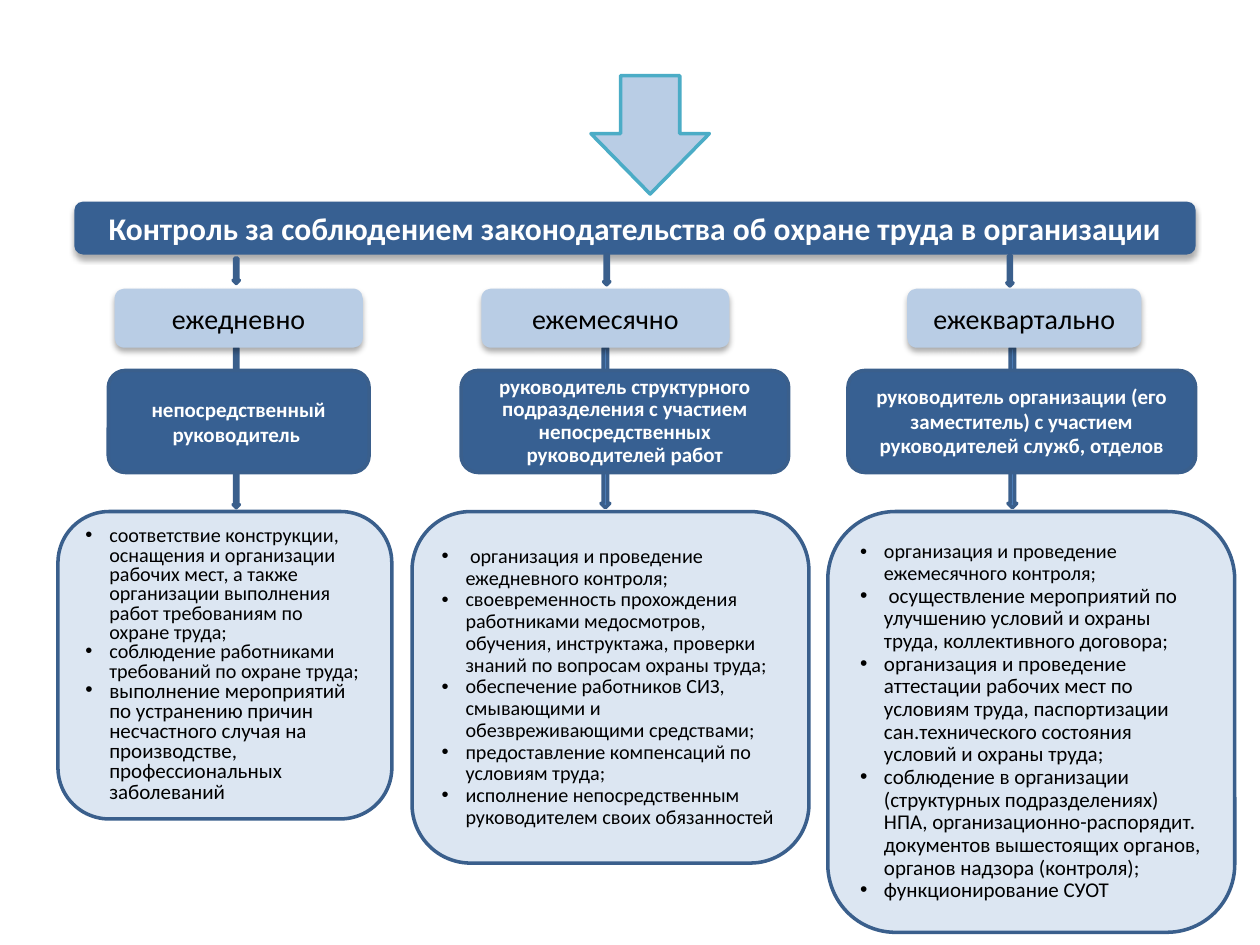
from lxml.etree import SubElement
from pptx import Presentation
from pptx.dml.color import RGBColor
from pptx.enum.shapes import MSO_SHAPE as Shape
from pptx.enum.text import MSO_ANCHOR as Anchor, PP_ALIGN as Align
from pptx.oxml.ns import qn
from pptx.util import Inches, Pt

NAVY, EDGE, BLUE, TEAL = "376092", "3A5F8C", "4F81BD", "4BACC6"
SKY, PALE, WHITE, BLACK = "B9CDE5", "DCE6F2", "FFFFFF", "000000"
TITLE = "Контроль за соблюдением законодательства об охране труда в организации"

COLUMNS = [
    dict(
        period="ежедневно", period_at=(9.1, 19.7), top_arrow=(18.5, 20.5, 0.5, 2),
        long_arrow=(18.5, 0.5),
        person="непосредственный руководитель ", person_at=(8.6, 20.7), person_spacing=1.0,
        duties_at=(4.6, 26.5, 24.4), duties_spacing=0.8,
        duties=[
            ("соответствие конструкции, оснащения и организации рабочих мест, а также "
             "организации выполнения работ требованиям по охране труда;", 11.5),
            ("соблюдение работниками требований по охране труда;", 11.5),
            ("выполнение мероприятий по устранению причин несчастного случая на "
             "производстве, профессиональных заболеваний", 12),
        ],
    ),
    dict(
        period="ежемесячно", period_at=(38.2, 19.7), top_arrow=(47.9, 20.2, 0.5, 2.4),
        long_arrow=(47.7, 0.7),
        person="руководитель структурного подразделения с участием непосредственных "
               "руководителей работ",
        person_at=(36.6, 26), person_spacing=0.9,
        duties_at=(32.7, 31.5, 27.9), duties_spacing=0.9,
        duties=[
            (" организация и проведение ежедневного контроля;", 11.5),
            ("своевременность прохождения работниками медосмотров, обучения, "
             "инструктажа, проверки знаний по вопросам охраны труда;", 11.5),
            ("обеспечение работников СИЗ, смывающими и обезвреживающими средствами;", 11.5),
            ("предоставление компенсаций по условиям труда;", 11.5),
            ("исполнение непосредственным руководителем своих обязанностей", 11.5),
        ],
    ),
    dict(
        period="ежеквартально", period_at=(72, 18.6), top_arrow=(79.9, 20.3, 0.5, 2.4),
        long_arrow=(80, 0.7),
        person="руководитель организации (его заместитель) с участием руководителей "
               "служб, отделов",
        person_at=(67.3, 27.6), person_spacing=Pt(14),
        duties_at=(65.7, 32.3, 33.4), duties_spacing=0.9,
        duties=[
            ("организация и проведение ежемесячного контроля;", 11.5),
            (" осуществление мероприятий по улучшению условий и охраны труда, "
             "коллективного договора;", 12),
            ("организация и проведение аттестации рабочих мест по условиям труда, "
             "паспортизации сан.технического состояния условий и охраны труда;", 12),
            ("соблюдение в организации (структурных подразделениях) НПА, "
             "организационно-распорядит. документов вышестоящих органов, органов "
             "надзора (контроля);", 12),
            ("функционирование СУОТ", 12),
        ],
    ),
]


def color(value):
    """Turn a hex string into a colour."""
    return RGBColor.from_string(value)


class Chart:
    """Draws the scheme on a slide with a grid of 100 columns by 75 rows."""

    font = "Calibri"

    def __init__(self, deck):
        self.slide = deck.slides.add_slide(deck.slide_layouts[6])
        self.column, self.row = deck.slide_width / 100, deck.slide_height / 75

    def form(self, kind, at, fill, edge=None):
        """Add a filled shape at left, top, width and height in grid units."""
        left, top, width, height = at
        form = self.slide.shapes.add_shape(
            kind, round(left * self.column), round(top * self.row),
            round(width * self.column), round(height * self.row))
        form.shadow.inherit = False
        form.fill.solid()
        form.fill.fore_color.rgb = color(fill)
        if edge:
            form.line.color.rgb = color(edge)
            form.line.width = Pt(2)
        else:
            form.line.fill.background()
        return form

    def arrow(self, at, fill=BLUE, edge=EDGE):
        """Add an arrow that points down."""
        return self.form(Shape.DOWN_ARROW, at, fill, edge)

    def set_text(self, paragraph, text, size, ink, bold=False):
        """Put styled text in a paragraph."""
        paragraph.text = text
        font = paragraph.font
        font.name, font.size, font.bold = self.font, Pt(size), bold
        font.color.rgb = color(ink)

    def box(self, at, fill, text, size, ink, bold=False, edge=None, spacing=1.0):
        """Add a rounded box with one centred paragraph."""
        box = self.form(Shape.ROUNDED_RECTANGLE, at, fill, edge)
        box.text_frame.word_wrap = True
        box.text_frame.vertical_anchor = Anchor.MIDDLE
        paragraph = box.text_frame.paragraphs[0]
        paragraph.alignment, paragraph.line_spacing = Align.CENTER, spacing
        self.set_text(paragraph, text, size, ink, bold)
        return box

    def raised_box(self, *args, **style):
        """Add a rounded box with a soft shadow below it."""
        effects = self.box(*args, **style)._element.spPr.find(qn("a:effectLst"))
        shadow = SubElement(effects, qn("a:outerShdw"), blurRad=str(Pt(3.5)),
                            dist=str(Pt(2.2)), dir="5400000", rotWithShape="0")
        tint = SubElement(shadow, qn("a:srgbClr"), val=BLACK)
        SubElement(tint, qn("a:alpha"), val="32000")

    def bullet_box(self, at, items, spacing):
        """Add a rounded box with a bulleted list of texts and sizes."""
        box = self.form(Shape.ROUNDED_RECTANGLE, at, PALE, EDGE)
        frame = box.text_frame
        frame.word_wrap, frame.vertical_anchor = True, Anchor.MIDDLE
        for index, (text, size) in enumerate(items):
            paragraph = frame.add_paragraph() if index else frame.paragraphs[0]
            paragraph.alignment, paragraph.line_spacing = Align.LEFT, spacing
            layout = paragraph._p.get_or_add_pPr()
            layout.set("marL", str(Inches(0.19)))
            layout.set("indent", str(-Inches(0.19)))
            SubElement(layout, qn("a:buFont"), typeface="Arial")
            SubElement(layout, qn("a:buChar"), char="•")
            self.set_text(paragraph, text, size, BLACK)


def main():
    """Build and save the slide."""
    deck = Presentation()
    deck.slide_width, deck.slide_height = Inches(10), Inches(7.5)
    chart = Chart(deck)
    chart.raised_box((5.9, 16, 89, 4.2), NAVY, TITLE, 18, WHITE, bold=True)
    for column in COLUMNS:
        left, width, height = column["duties_at"]
        chart.bullet_box((left, 40.6, width, height), column["duties"],
                         column["duties_spacing"])
        chart.arrow(column["top_arrow"])
        left, width = column["long_arrow"]
        chart.arrow((left, 27.6, width, 12.7))
        left, width = column["person_at"]
        chart.box((left, 29.4, width, 8.1), NAVY, column["person"], 12, WHITE,
                  bold=True, edge=EDGE, spacing=column["person_spacing"])
        left, width = column["period_at"]
        chart.raised_box((left, 22.9, width, 4.7), SKY, column["period"], 16, BLACK)
    chart.arrow((46.9, 6, 9.4, 9.4), SKY, TEAL).adjustments[1] = 0.51
    deck.save("out.pptx")


if __name__ == "__main__":
    main()
